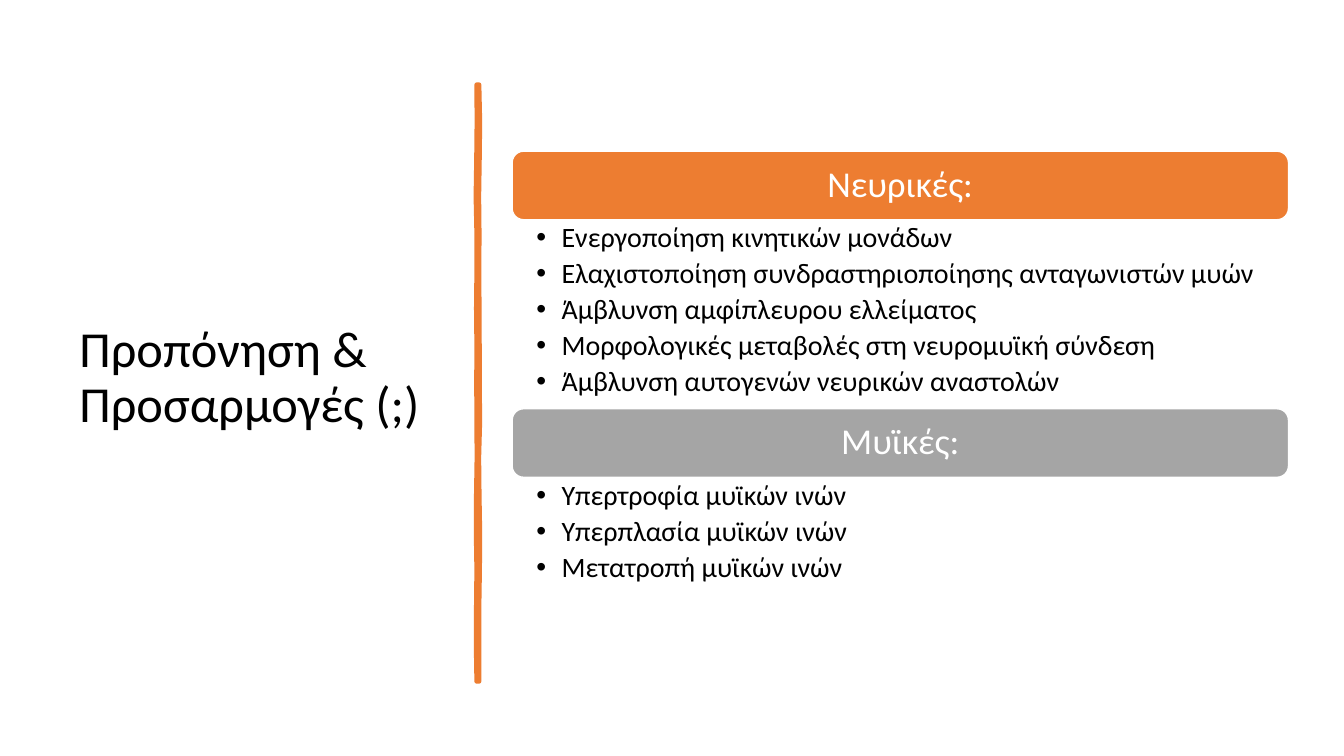
from lxml.etree import SubElement
from pptx import Presentation
from pptx.dml.color import RGBColor
from pptx.enum.shapes import MSO_SHAPE
from pptx.enum.text import MSO_ANCHOR
from pptx.oxml.ns import qn
from pptx.util import Inches, Pt

SLIDE_WIDTH, SLIDE_HEIGHT = 13.33, 7.5
FONT = "Calibri"
ORANGE, GRAY, BLACK, WHITE = "ED7D31", "A5A5A5", "000000", "FFFFFF"

HEADER_HEIGHT = 0.68
BULLET_HEIGHT = 0.365
LIST_PADDING = 0.05

TITLE = "Προπόνηση & Προσαρμογές (;)"
SECTIONS = [
    ("Νευρικές:", ORANGE, [
        "Ενεργοποίηση κινητικών μονάδων",
        "Ελαχιστοποίηση συνδραστηριοποίησης ανταγωνιστών μυών",
        "Άμβλυνση αμφίπλευρου ελλείματος",
        "Μορφολογικές μεταβολές στη νευρομυϊκή σύνδεση",
        "Άμβλυνση αυτογενών νευρικών αναστολών",
    ]),
    ("Μυϊκές:", GRAY, [
        "Υπερτροφία μυϊκών ινών",
        "Υπερπλασία μυϊκών ινών",
        "Μετατροπή μυϊκών ινών",
    ]),
]

# Sideways wobble of the divider's two edges, in shares of its width, at equal steps down
RIGHT_EDGE = [0.8, 1, 0.9, 0.75, 0.85, 0.8, 0.85, 0.9, 0.9, 1, 0.75, 0.85, 1, 0.95, 0.8, 0.8, 0.8]
LEFT_EDGE = [0.2, 0.25, 0.15, 0, 0.2, 0.2, 0.1, 0.2, 0.15, 0.2, 0.25, 0.1, 0.05, 0.2, 0.1, 0.05, 0.2]


def color(hex_string):
    return RGBColor.from_string(hex_string)


def paint(shape, fill, line, line_width):
    shape.shadow.inherit = False
    shape.fill.solid()
    shape.fill.fore_color.rgb = color(fill)
    shape.line.color.rgb = color(line)
    shape.line.width = Pt(line_width)


def set_frame(shape, anchor, left, top, right, bottom):
    frame = shape.text_frame
    frame.word_wrap = True
    frame.vertical_anchor = anchor
    frame.margin_left, frame.margin_top = Inches(left), Inches(top)
    frame.margin_right, frame.margin_bottom = Inches(right), Inches(bottom)
    return frame


def write(paragraph, text, size, text_color):
    paragraph.text = text
    paragraph.line_spacing = 0.9
    paragraph.font.size = Pt(size)
    paragraph.font.name = FONT
    paragraph.font.color.rgb = color(text_color)


def add_bullet(paragraph):
    properties = paragraph._p.get_or_add_pPr()
    properties.set("marL", str(Inches(0.25)))
    properties.set("indent", str(-Inches(0.25)))
    SubElement(properties, qn("a:buFont"), typeface="Arial")
    SubElement(properties, qn("a:buChar"), char="•")


def add_title(slide, left, top, width, height):
    box = slide.shapes.add_textbox(Inches(left), Inches(top), Inches(width), Inches(height))
    frame = set_frame(box, MSO_ANCHOR.MIDDLE, 0.1, 0.05, 0.1, 0.05)
    write(frame.paragraphs[0], TITLE, 36, BLACK)


def add_divider(slide, left, top, width, height):
    step = height / (len(RIGHT_EDGE) - 1)

    def edge_points(edge):
        return [(Inches(left + share * width), Inches(top + row * step))
                for row, share in enumerate(edge)]

    outline = edge_points(RIGHT_EDGE) + edge_points(LEFT_EDGE)[::-1]
    builder = slide.shapes.build_freeform(*outline[0])
    builder.add_line_segments(outline[1:], close=True)
    paint(builder.convert_to_shape(), ORANGE, ORANGE, 3.25)


def add_section(slide, left, top, width, heading, fill, bullets):
    """Place a header bar with its list below, and return the bottom edge."""
    # Header bar
    header = slide.shapes.add_shape(MSO_SHAPE.ROUNDED_RECTANGLE, Inches(left), Inches(top),
                                    Inches(width), Inches(HEADER_HEIGHT))
    paint(header, fill, WHITE, 1)
    frame = set_frame(header, MSO_ANCHOR.MIDDLE, 0.11, 0.11, 0.11, 0.11)
    write(frame.paragraphs[0], heading, 26, WHITE)

    # Bullet list
    list_top = top + HEADER_HEIGHT
    list_height = len(bullets) * BULLET_HEIGHT + LIST_PADDING
    box = slide.shapes.add_textbox(Inches(left), Inches(list_top),
                                   Inches(width), Inches(list_height))
    frame = set_frame(box, MSO_ANCHOR.TOP, 0.24, 0.04, 0.2, 0.04)
    for index, text in enumerate(bullets):
        paragraph = frame.add_paragraph() if index else frame.paragraphs[0]
        add_bullet(paragraph)
        write(paragraph, text, 20, BLACK)
        paragraph.space_after = Pt(4)
    return list_top + list_height


def add_sections(slide, left, top, width):
    for heading, fill, bullets in SECTIONS:
        top = add_section(slide, left, top, width, heading, fill, bullets)


def main():
    presentation = Presentation()
    presentation.slide_width = Inches(SLIDE_WIDTH)
    presentation.slide_height = Inches(SLIDE_HEIGHT)
    slide = presentation.slides.add_slide(presentation.slide_layouts[6])

    add_title(slide, 0.69, 0.7, 0.28 * SLIDE_WIDTH, 6.11)
    add_divider(slide, 4.72, 0.84, 0.04, 5.92)
    add_sections(slide, 5.08, 0.2 * SLIDE_HEIGHT, 7.7)

    presentation.save("out.pptx")


if __name__ == "__main__":
    main()
